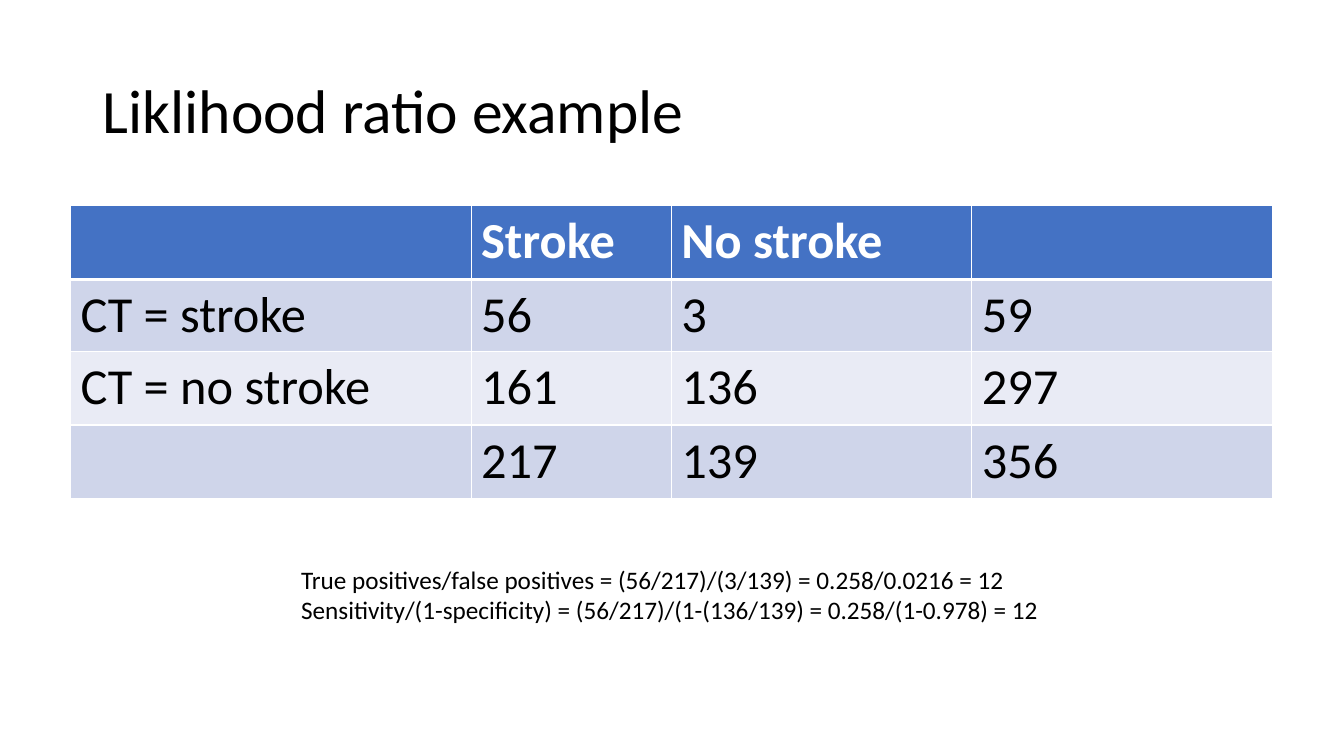
from dataclasses import dataclass

from lxml.etree import SubElement
from pptx import Presentation
from pptx.dml.color import RGBColor
from pptx.enum.text import MSO_ANCHOR, PP_ALIGN
from pptx.oxml.ns import qn
from pptx.util import Cm, Pt

TITLE = "Liklihood ratio example"
COUNTS = [
    ("", "Stroke", "No stroke", ""),
    ("CT = stroke", "56", "3", "59"),
    ("CT = no stroke", "161", "136", "297"),
    ("", "217", "139", "356"),
]
FORMULAS = [
    "True positives/false positives = (56/217)/(3/139) = 0.258/0.0216 = 12",
    "Sensitivity/(1-specificity) = (56/217)/(1-(136/139) = 0.258/(1-0.978) = 12",
]

COLUMN_SHARES = (4, 2, 3, 3)
ROW_HEIGHTS = (1.86, 1.8, 1.86, 1.86)
TITLE_AREA = (2.33, 1.01, 29.21, 3.68)
TABLE_AREA = (1.78, 5.18, 30.28, sum(ROW_HEIGHTS))
FORMULA_AREA = (7.34, 14.1, 19.18, 1.8)


@dataclass(frozen=True)
class Theme:
    font: str = "Calibri"
    text: str = "000000"
    light: str = "FFFFFF"
    header: str = "4472C4"
    bands: tuple = ("CFD5EA", "E9EBF5")
    title_size: int = 44
    table_size: int = 36
    formula_size: int = 18


THEME = Theme()


def write(para, words, size, color=THEME.text, bold=False):
    para.alignment = PP_ALIGN.LEFT
    span = para.add_run()
    span.text = words
    formats = {"name": THEME.font, "size": Pt(size), "bold": bold}
    for name, value in formats.items():
        setattr(span.font, name, value)
    span.font.color.rgb = RGBColor.from_string(color)


def add_borders(cell, bottom_width):
    """Draw the four cell edges; call before filling, as the schema wants lines first."""
    properties = cell._tc.get_or_add_tcPr()
    for side, width in (("L", 1), ("R", 1), ("T", 1), ("B", bottom_width)):
        line = SubElement(properties, qn(f"a:ln{side}"), w=str(Pt(width)))
        fill = SubElement(line, qn("a:solidFill"))
        SubElement(fill, qn("a:srgbClr"), val=THEME.light)


def add_title(page):
    title = page.shapes.title
    for name, value in zip(("left", "top", "width", "height"), TITLE_AREA):
        setattr(title, name, Cm(value))
    title.text_frame.vertical_anchor = MSO_ANCHOR.MIDDLE
    para = title.text_frame.paragraphs[0]
    para.line_spacing = 0.9
    write(para, TITLE, THEME.title_size)


def add_counts(page):
    table = page.shapes.add_table(
        len(COUNTS), len(COLUMN_SHARES), *map(Cm, TABLE_AREA)
    ).table
    for column, share in zip(table.columns, COLUMN_SHARES):
        column.width = Cm(TABLE_AREA[2] * share / sum(COLUMN_SHARES))
    for index, (height, entries) in enumerate(zip(ROW_HEIGHTS, COUNTS)):
        is_header = index == 0
        table.rows[index].height = Cm(height)
        background = THEME.header if is_header else THEME.bands[(index - 1) % 2]
        color = THEME.light if is_header else THEME.text
        for cell, words in zip(table.rows[index].cells, entries):
            add_borders(cell, 3 if is_header else 1)
            cell.fill.solid()
            cell.fill.fore_color.rgb = RGBColor.from_string(background)
            if words:
                para = cell.text_frame.paragraphs[0]
                write(para, words, THEME.table_size, color, is_header)


def add_formulas(page):
    frame = page.shapes.add_textbox(*map(Cm, FORMULA_AREA)).text_frame
    frame.word_wrap = False
    for index, formula in enumerate(FORMULAS):
        para = frame.add_paragraph() if index else frame.paragraphs[0]
        write(para, formula, THEME.formula_size)


def main():
    deck = Presentation()
    deck.slide_width, deck.slide_height = Cm(33.87), Cm(19.05)
    page = deck.slides.add_slide(deck.slide_layouts.get_by_name("Title Only"))
    add_title(page)
    add_counts(page)
    add_formulas(page)
    deck.save("out.pptx")


if __name__ == "__main__":
    main()
